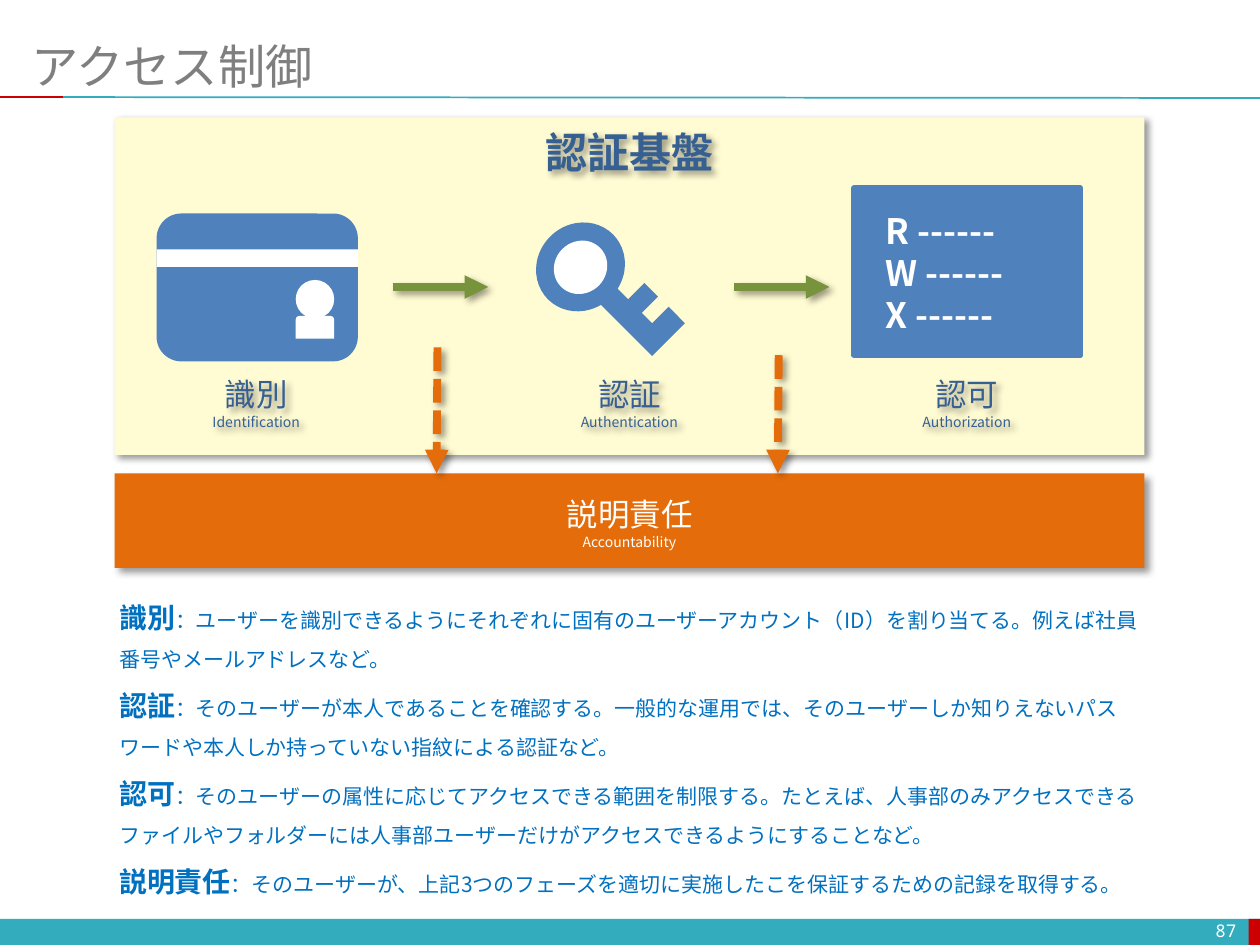
from lxml import etree
from pptx import Presentation
from pptx.dml.color import RGBColor
from pptx.enum.dml import MSO_LINE
from pptx.enum.shapes import MSO_CONNECTOR, MSO_SHAPE
from pptx.enum.text import MSO_ANCHOR, PP_ALIGN
from pptx.oxml.ns import qn
from pptx.util import Pt

RECTANGLE = MSO_SHAPE.RECTANGLE
ROUNDED = MSO_SHAPE.ROUNDED_RECTANGLE
ROUND_TOP = MSO_SHAPE.ROUND_2_SAME_RECTANGLE
ELLIPSE = MSO_SHAPE.OVAL
CORNER = MSO_SHAPE.CORNER
STRAIGHT = MSO_CONNECTOR.STRAIGHT
DASH = MSO_LINE.SQUARE_DOT
LEFT, CENTER, RIGHT = PP_ALIGN.LEFT, PP_ALIGN.CENTER, PP_ALIGN.RIGHT
TOP, MIDDLE = MSO_ANCHOR.TOP, MSO_ANCHOR.MIDDLE

SANS, MONO = "Noto Sans CJK JP", "Noto Sans Mono"
TEAL, RED, WHITE, GRAY = "33ACBD", "CC0000", "FFFFFF", "7F7F7F"
CREAM, ORANGE, GREEN = "FFFBD2", "E46C0A", "77933C"
BLUE, NAVY, TEXT_BLUE = "4F81BD", "376092", "0070C0"

PANEL_LEFT, PANEL_WIDTH = 65.5, 588.5
PANEL_CENTER = PANEL_LEFT + PANEL_WIDTH / 2
LABEL_TOP = 211
LABELS = [
    (146.5, "識別", "Identification"),
    (PANEL_CENTER, "認証", "Authentication"),
    (552.5, "認可", "Authorization"),
]
DEFINITIONS = [
    ("識別", "ユーザーを識別できるようにそれぞれに固有のユーザーアカウント（ID）を割り当てる。"
             "例えば社員番号やメールアドレスなど。"),
    ("認証", "そのユーザーが本人であることを確認する。一般的な運用では、"
             "そのユーザーしか知りえないパスワードや本人しか持っていない指紋による認証など。"),
    ("認可", "そのユーザーの属性に応じてアクセスできる範囲を制限する。たとえば、人事部のみ"
             "アクセスできるファイルやフォルダーには人事部ユーザーだけがアクセスできるようにすることなど。"),
    ("説明責任", "そのユーザーが、上記3つのフェーズを適切に実施したこを保証するための記録を取得する。"),
]


def color(hex_value):
    return RGBColor.from_string(hex_value)


def set_font(font, size, hex_value, bold=False, name=SANS):
    """Set the font for Latin and East Asian text alike."""
    font.size, font.bold, font.name = Pt(size), bold, name
    font.color.rgb = color(hex_value)
    latin = font._element.find(qn("a:latin"))
    latin.addnext(etree.Element(qn("a:ea"), typeface=name))


def set_effects(shape, shadow):
    """Give the shape a soft drop shadow, or an empty effect list."""
    properties = shape._element.spPr
    effects = etree.SubElement(properties, qn("a:effectLst"))
    if shadow:
        outer = etree.SubElement(effects, qn("a:outerShdw"), blurRad=str(Pt(4)), dist=str(Pt(3)),
                                 dir="2700000", algn="tl", rotWithShape="0")
        black = etree.SubElement(outer, qn("a:srgbClr"), val="000000")
        etree.SubElement(black, qn("a:alpha"), val="40000")


def add_box(shapes, kind, left, top, width, height, fill, shadow=False, rotation=0):
    shape = shapes.add_shape(kind, Pt(left), Pt(top), Pt(width), Pt(height))
    shape.fill.solid()
    shape.fill.fore_color.rgb = color(fill)
    shape.line.fill.background()
    shape.rotation = rotation
    set_effects(shape, shadow)
    return shape


def add_line(shapes, start, end, hex_value, width, arrow=False, dash=None):
    """Draw a line; an arrow also gets a head at its end and a shadow."""
    line = shapes.add_connector(STRAIGHT, *map(Pt, start + end))
    line.line.color.rgb = color(hex_value)
    line.line.width = Pt(width)
    if dash:
        line.line.dash_style = dash
    if arrow:
        etree.SubElement(line.line._get_or_add_ln(), qn("a:tailEnd"), type="triangle")
    set_effects(line, arrow)


def write_lines(frame, lines, align=LEFT):
    """Write one paragraph for each (text, size, colour, bold, font name)."""
    for index, (text, *style) in enumerate(lines):
        paragraph = frame.paragraphs[0] if index == 0 else frame.add_paragraph()
        paragraph.text = text
        paragraph.alignment = align
        set_font(paragraph.font, *style)


def add_text(shapes, left, top, width, height, lines=(), align=LEFT, wrap=False, anchor=TOP):
    box = shapes.add_textbox(Pt(left), Pt(top), Pt(width), Pt(height))
    box.text_frame.word_wrap = wrap
    box.text_frame.vertical_anchor = anchor
    write_lines(box.text_frame, lines, align)
    return box


def add_label(shapes, center, top, japanese, english, hex_value):
    width = 88
    lines = [(japanese, 18, hex_value), (english, 8, hex_value)]
    return add_text(shapes, center - width / 2, top, width, 39, lines, CENTER)


def add_frame(slide):
    shapes = slide.shapes
    add_box(shapes, RECTANGLE, 0, 525, 720, 15, TEAL)
    add_box(shapes, RECTANGLE, 713.5, 525, 6.5, 15, RED)
    add_line(shapes, (36, 55.5), (720, 56), TEAL, 1)
    add_line(shapes, (0, 55.5), (36, 55.5), RED, 1)
    add_text(shapes, 546, 523.5, 167.5, 17, [("87", 10, WHITE, False, MONO)], RIGHT, True, MIDDLE)


def add_title(slide, text):
    title = slide.shapes.title
    title.left, title.top, title.width, title.height = Pt(18), Pt(21), Pt(684), Pt(33)
    frame = title.text_frame
    frame.margin_left = frame.margin_right = 0
    frame.vertical_anchor = MIDDLE
    write_lines(frame, [(text, 27, GRAY)])


def add_card_icon(slide):
    shapes = slide.shapes.add_group_shape().shapes
    add_box(shapes, ROUNDED, 89.5, 122, 115, 84.5, BLUE)
    add_box(shapes, RECTANGLE, 89.5, 142.5, 115, 10, WHITE)
    add_box(shapes, ELLIPSE, 169, 160, 22, 22, WHITE)
    add_box(shapes, ROUND_TOP, 169, 180.5, 22, 13, WHITE)


def add_key_icon(slide):
    shapes = slide.shapes.add_group_shape().shapes
    add_box(shapes, ELLIPSE, 305.5, 128, 52.5, 49, BLUE, rotation=315)
    add_box(shapes, ELLIPSE, 316, 138, 31.5, 29.5, WHITE, rotation=315)
    add_box(shapes, CORNER, 352, 153.5, 26.5, 47.5, BLUE, rotation=315)
    add_box(shapes, RECTANGLE, 355.5, 167, 19.5, 11, BLUE, rotation=315)


def add_permission_icon(slide):
    shapes = slide.shapes.add_group_shape().shapes
    sheet = add_box(shapes, RECTANGLE, 488, 107.5, 129.5, 95.5, BLUE)
    sheet.line.color.rgb = color(BLUE)
    sheet.line.width = Pt(3)
    listing = add_box(shapes, RECTANGLE, 499, 116, 106, 80, BLUE)
    listing.text_frame.vertical_anchor = TOP
    write_lines(listing.text_frame, [(f"{letter} ------", 20, WHITE, True) for letter in "RWX"])


def add_definitions(slide):
    frame = add_text(slide.shapes, 61, 330, 597, 186.5, wrap=True).text_frame
    for index, (term, meaning) in enumerate(DEFINITIONS):
        paragraph = frame.paragraphs[0] if index == 0 else frame.add_paragraph()
        paragraph.line_spacing = 1.5
        for text, size, bold in ((term, 16, True), ("：" + meaning, 12, False)):
            run = paragraph.add_run()
            run.text = text
            set_font(run.font, size, TEXT_BLUE, bold)


def main():
    presentation = Presentation()
    presentation.slide_width, presentation.slide_height = Pt(720), Pt(540)
    slide = presentation.slides.add_slide(presentation.slide_layouts[5])
    shapes = slide.shapes
    add_frame(slide)
    add_title(slide, "アクセス制御")

    add_box(shapes, RECTANGLE, PANEL_LEFT, 67, PANEL_WIDTH, 193, CREAM, shadow=True)
    add_box(shapes, RECTANGLE, PANEL_LEFT, 270.5, PANEL_WIDTH, 54, ORANGE, shadow=True)
    for center, japanese, english in LABELS:
        set_effects(add_label(shapes, center, LABEL_TOP, japanese, english, NAVY), True)
    add_label(shapes, PANEL_CENTER, 279.5, "説明責任", "Accountability", WHITE)

    add_card_icon(slide)
    add_key_icon(slide)
    add_permission_icon(slide)
    for left in (224.5, 419.5):
        add_line(shapes, (left, 164), (left + 54.5, 164), GREEN, 4.5, arrow=True)
    for left, top in ((250, 198.5), (445, 203)):
        add_line(shapes, (left, top), (left - 0.5, 270.5), ORANGE, 4.5, arrow=True, dash=DASH)

    add_definitions(slide)
    heading = add_text(shapes, 304, 68.5, 111.5, 36, [("認証基盤", 24, NAVY, True)], CENTER)
    set_effects(heading, True)
    presentation.save("out.pptx")


if __name__ == "__main__":
    main()
